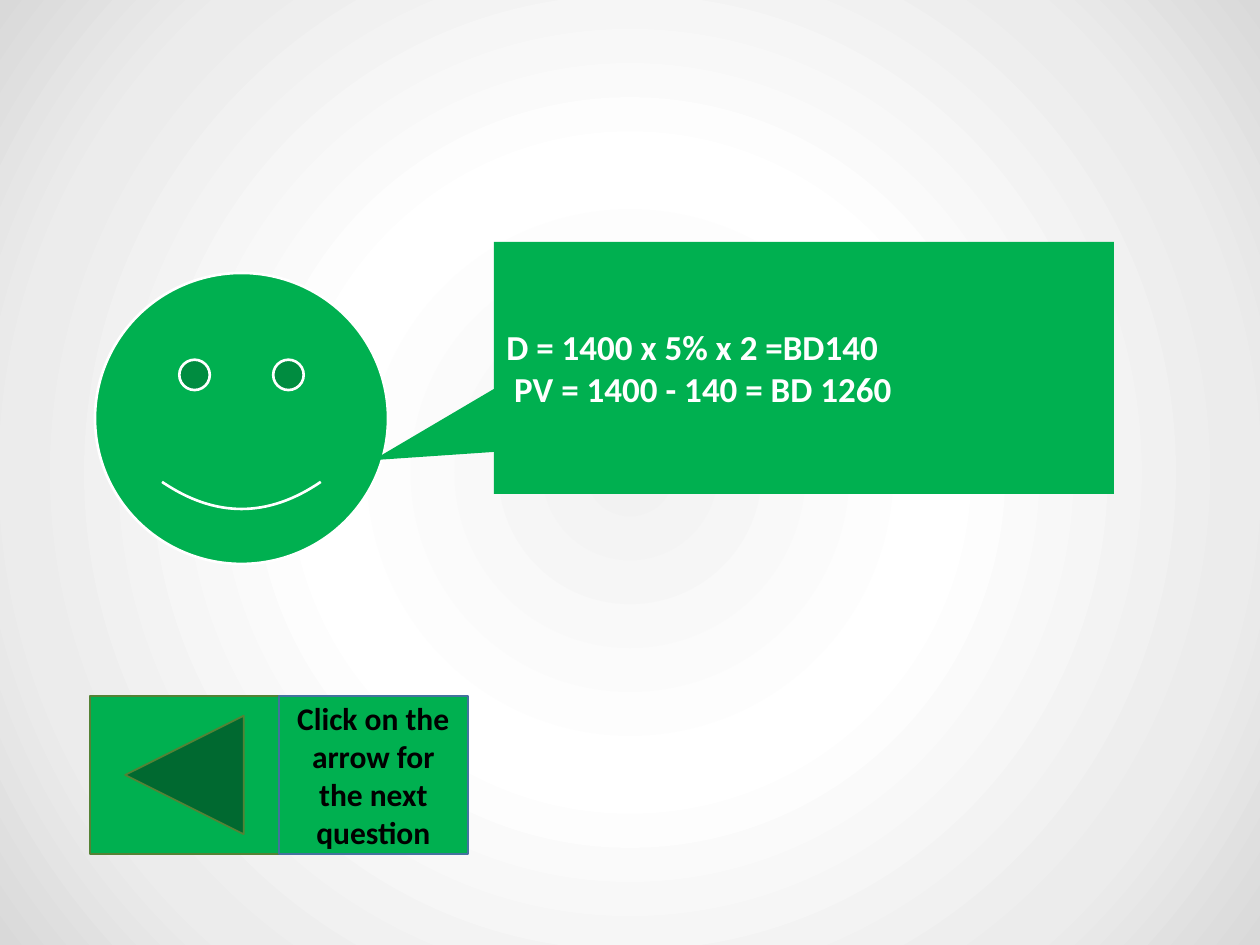
from dataclasses import dataclass

from lxml import etree
from pptx import Presentation
from pptx.dml.color import RGBColor
from pptx.enum.shapes import MSO_SHAPE
from pptx.enum.text import MSO_ANCHOR, PP_ALIGN
from pptx.oxml.ns import qn
from pptx.util import Emu, Pt

SMILEY = MSO_SHAPE.SMILEY_FACE
BACK_BUTTON = MSO_SHAPE.ACTION_BUTTON_BACK_OR_PREVIOUS
CALLOUT = MSO_SHAPE.RECTANGULAR_CALLOUT
PENTAGON = MSO_SHAPE.PENTAGON
MIDDLE = MSO_ANCHOR.MIDDLE
LEFT = PP_ALIGN.LEFT
CENTER = PP_ALIGN.CENTER
EMU_PER_PX = 914400 / 126


def px(length):
    return Emu(round(length * EMU_PER_PX))


@dataclass(frozen=True)
class Theme:
    font: str = "Calibri"
    green: str = "00B050"
    white: str = "FFFFFF"
    black: str = "000000"
    button_line: str = "548235"
    label_line: str = "43739E"
    backdrop: tuple = ((0, "F2F2F2"), (39, "FFFFFF"), (78, "ECECEC"), (100, "D9D9D9"))
    answer_size: int = 20
    label_size: int = 18


class Painter:
    def __init__(self, page, theme):
        self.page = page
        self.theme = theme

    def radial_background(self, stops):
        fill = self.page.background.fill
        fill.gradient()
        gradient = self.page.background._cSld.find(".//" + qn("a:gradFill"))
        for child in list(gradient):
            gradient.remove(child)
        stop_list = etree.SubElement(gradient, qn("a:gsLst"))
        for percent, color in stops:
            stop = etree.SubElement(stop_list, qn("a:gs"), pos=str(percent * 1000))
            etree.SubElement(stop, qn("a:srgbClr"), val=color)
        circle = etree.SubElement(gradient, qn("a:path"))
        circle.set("path", "circle")
        center = etree.SubElement(circle, qn("a:fillToRect"))
        for side in "ltrb":
            center.set(side, "50000")

    def shape(self, kind, left, top, width, height, line=None, weight=1, adjustments=()):
        shape = self.page.shapes.add_shape(kind, px(left), px(top), px(width), px(height))
        shape.shadow.inherit = False
        shape.fill.solid()
        shape.fill.fore_color.rgb = RGBColor.from_string(self.theme.green)
        if line:
            shape.line.color.rgb = RGBColor.from_string(line)
            shape.line.width = Pt(weight)
        else:
            shape.line.fill.background()
        for index, value in enumerate(adjustments):
            shape.adjustments[index] = value
        return shape

    def text(self, shape, lines, size, color, align):
        frame = shape.text_frame
        frame.word_wrap = True
        frame.vertical_anchor = MIDDLE
        for index, line in enumerate(lines):
            para = frame.add_paragraph() if index else frame.paragraphs[0]
            para.alignment = align
            span = para.add_run()
            span.text = line
            span.font.name = self.theme.font
            span.font.size = Pt(size)
            span.font.bold = True
            span.font.color.rgb = RGBColor.from_string(color)

    def flip(self, shape):
        shape._element.spPr.find(qn("a:xfrm")).set("flipH", "1")


def main():
    theme = Theme()
    deck = Presentation()
    deck.slide_width, deck.slide_height = px(1260), px(945)
    page = deck.slides.add_slide(deck.slide_layouts[6])
    painter = Painter(page, theme)
    painter.radial_background(theme.backdrop)

    painter.shape(SMILEY, 95, 273, 293, 291, theme.white, 1.5, (0.047,))

    button_left, button_top, button_width, button_height = 90, 696, 189, 158
    painter.shape(BACK_BUTTON, button_left, button_top, button_width, button_height,
                  theme.button_line)

    answer = painter.shape(CALLOUT, 494, 242, 620, 252, adjustments=(-0.695, 0.366))
    painter.text(answer, ("D = 1400 x 5% x 2 =BD140", " PV = 1400 - 140 = BD 1260"),
                 theme.answer_size, theme.white, LEFT)

    label = painter.shape(PENTAGON, button_left + button_width, button_top, button_width,
                          button_height, theme.label_line, adjustments=(0,))
    painter.flip(label)
    painter.text(label, ("Click on the arrow for the next question",),
                 theme.label_size, theme.black, CENTER)

    deck.save("out.pptx")


if __name__ == "__main__":
    main()
